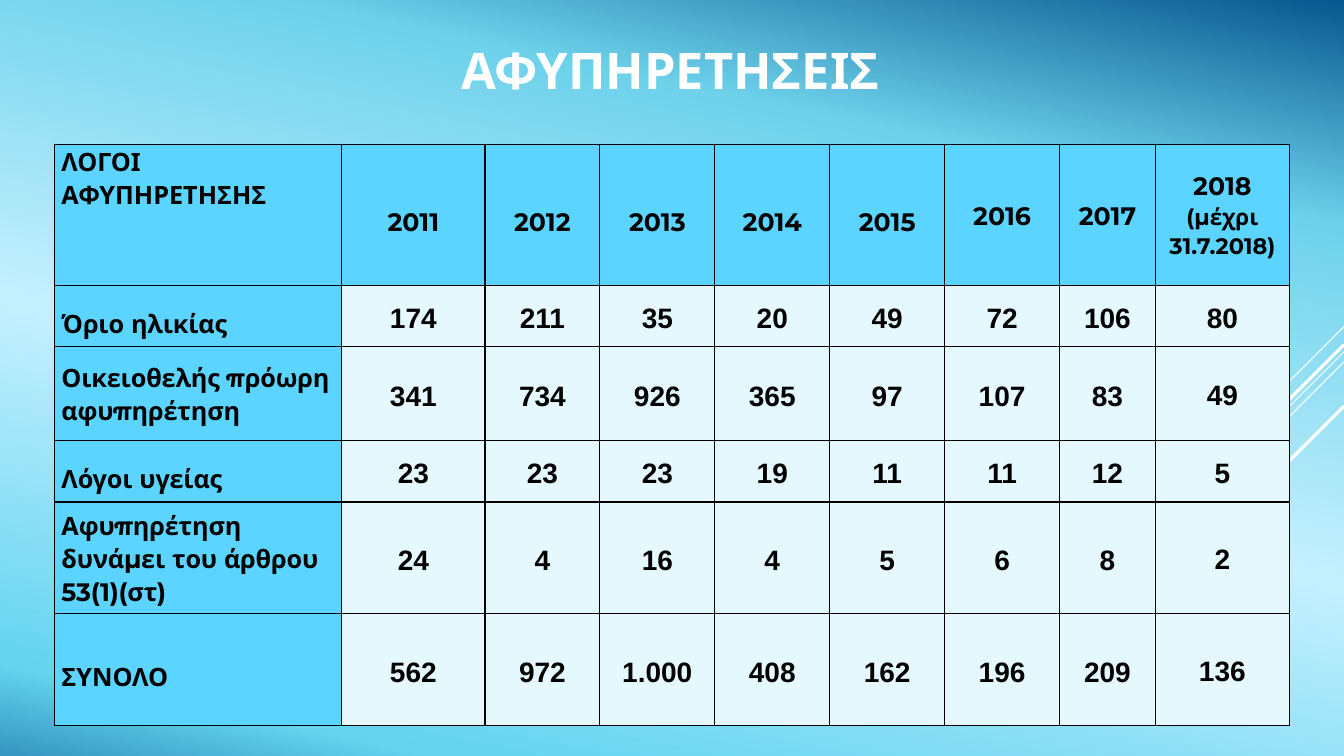
from dataclasses import dataclass

from lxml.etree import SubElement
from pptx import Presentation
from pptx.dml.color import RGBColor
from pptx.enum.shapes import MSO_CONNECTOR
from pptx.enum.text import MSO_ANCHOR, MSO_AUTO_SIZE, PP_ALIGN
from pptx.oxml.ns import qn
from pptx.slide import Slide
from pptx.table import Table, _Cell
from pptx.util import Emu, Pt

EMU_PER_PX = 9144  # 100 px to the inch
SLIDE_WIDTH, SLIDE_HEIGHT = 1333, 750


@dataclass(frozen=True)
class Theme:
    label_font: str = "Montserrat"
    number_font: str = "Arial"
    title_size: int = 36
    label_size: int = 18
    note_size: int = 16
    number_size: int = 20
    white: str = "FFFFFF"
    black: str = "000000"
    label_fill: str = "5BD4FF"
    number_fill: str = "E4F8FD"
    sky: tuple[tuple[int, str], ...] = (
        (0, "06588E"), (22, "6ED2EB"), (56, "C5F0FF"), (91, "64D4EF"), (100, "3596BF"))
    sky_angle: int = 102


@dataclass(frozen=True)
class Streak:
    """A diagonal that runs down and left from the right slide edge."""
    top: int
    reach: int
    weight: float


@dataclass(frozen=True)
class Reason:
    label: str
    height: int
    line_spacing: float
    tracking: int
    counts: tuple[str, ...]


@dataclass(frozen=True)
class CellStyle:
    fill: str
    font: str
    size: int
    line_spacing: float
    align: PP_ALIGN = PP_ALIGN.CENTER
    anchor: MSO_ANCHOR = MSO_ANCHOR.MIDDLE
    space_after: int = 0
    side_margin: int = 7
    top_margin: int = 1


THEME = Theme()
STREAKS = (
    Streak(324, 100, 0.75),
    Streak(349, 326, 0.75),
    Streak(359, 207, 0.75),
    Streak(342, 191, 2.25),
    Streak(403, 139, 2.25),
)
TABLE_LEFT, TABLE_TOP = 54, 143
COLUMN_WIDTHS = (285, 142, 114, 114, 114, 114, 114, 95, 133)
HEADER_HEIGHT = 140
YEARS = ("2011", "2012", "2013", "2014", "2015", "2016", "2017", "2018 ")
LAST_YEAR_NOTE = "(μέχρι 31.7.2018)"
LOOSE_YEARS = YEARS[:5]
REASONS = (
    Reason("Όριο ηλικίας", 61, 1.5, -10,
           ("174", "211", "35", "20", "49", "72", "106", "80")),
    Reason("Οικειοθελής πρόωρη αφυπηρέτηση", 93, 1.07, -10,
           ("341", "734", "926", "365", "97", "107", "83", "49")),
    Reason("Λόγοι υγείας", 61, 1.5, -10,
           ("23", "23", "23", "19", "11", "11", "12", "5")),
    Reason("Αφυπηρέτηση δυνάμει του άρθρου 53(1)(στ)", 111, 1.07, -10,
           ("24", "4", "16", "4", "5", "6", "8", "2")),
    Reason("ΣΥΝΟΛΟ", 111, 1.5, 0,
           ("562", "972", "1.000", "408", "162", "196", "209", "136")),
)


def px(length: int) -> Emu:
    return Emu(length * EMU_PER_PX)


def paint_sky(slide: Slide) -> None:
    fill = slide.background.fill
    fill.gradient()
    fill.gradient_angle = 360 - THEME.sky_angle
    stops = slide.element.find(".//" + qn("a:gsLst"))
    for stop in list(stops):
        stops.remove(stop)
    for percent, color in THEME.sky:
        stop = SubElement(stops, qn("a:gs"), pos=str(percent * 1000))
        SubElement(stop, qn("a:srgbClr"), val=color)


def draw_streak(slide: Slide, streak: Streak) -> None:
    line = slide.shapes.add_connector(
        MSO_CONNECTOR.STRAIGHT, px(SLIDE_WIDTH), px(streak.top),
        px(SLIDE_WIDTH - streak.reach), px(streak.top + streak.reach))
    line.line.color.rgb = RGBColor.from_string(THEME.white)
    line.line.width = Pt(streak.weight)
    SubElement(line.element.spPr, qn("a:effectLst"))


def write_title(slide: Slide, wording: str) -> None:
    title = slide.shapes.title
    title.left, title.top, title.width, title.height = map(px, (215, 33, 900, 71))
    frame = title.text_frame
    frame.text = wording
    frame.auto_size = MSO_AUTO_SIZE.NONE
    frame.vertical_anchor = MSO_ANCHOR.MIDDLE
    heading = frame.paragraphs[0]
    heading.alignment = PP_ALIGN.CENTER
    heading.font.name = THEME.label_font
    heading.font.size = Pt(THEME.title_size)
    heading.font.bold = True
    heading.font.color.rgb = RGBColor.from_string(THEME.white)


def add_borders(cell: _Cell) -> None:
    properties = cell._tc.get_or_add_tcPr()
    for position, side in enumerate(("a:lnL", "a:lnR", "a:lnT", "a:lnB")):
        border = SubElement(properties, qn(side), w=str(Pt(1)))
        fill = SubElement(border, qn("a:solidFill"))
        SubElement(fill, qn("a:srgbClr"), val=THEME.black)
        properties.insert(position, border)


def fill_cell(cell: _Cell, wording: str, style: CellStyle) -> None:
    cell.fill.solid()
    cell.fill.fore_color.rgb = RGBColor.from_string(style.fill)
    add_borders(cell)
    cell.vertical_anchor = style.anchor
    cell.margin_left = cell.margin_right = px(style.side_margin)
    cell.margin_top, cell.margin_bottom = px(style.top_margin), px(0)
    cell.text = wording
    paragraph = cell.text_frame.paragraphs[0]
    paragraph.alignment = style.align
    paragraph.line_spacing = style.line_spacing
    paragraph.space_after = Pt(style.space_after)
    paragraph.font.name = style.font
    paragraph.font.size = Pt(style.size)
    paragraph.font.bold = True
    paragraph.font.color.rgb = RGBColor.from_string(THEME.black)


def label_style(line_spacing: float, **changes) -> CellStyle:
    return CellStyle(THEME.label_fill, THEME.label_font, THEME.label_size,
                     line_spacing, **changes)


def edge_margins(column: int) -> dict[str, int]:
    """The last column has no cell margins."""
    last = column == len(COLUMN_WIDTHS) - 1
    return {"side_margin": 0, "top_margin": 0} if last else {}


def fill_header(table: Table) -> None:
    table.rows[0].height = px(HEADER_HEIGHT)
    fill_cell(table.cell(0, 0), "ΛΟΓΟΙ ΑΦΥΠΗΡΕΤΗΣΗΣ",
              label_style(1.07, align=PP_ALIGN.LEFT, anchor=MSO_ANCHOR.TOP))
    for column, year in enumerate(YEARS, start=1):
        spacing = 1.5 if year in LOOSE_YEARS else 1.07
        fill_cell(table.cell(0, column), year,
                  label_style(spacing, **edge_margins(column)))
    note = table.cell(0, len(YEARS)).text_frame.paragraphs[0].add_run()
    note.text = LAST_YEAR_NOTE
    note.font.size = Pt(THEME.note_size)


def fill_reason(table: Table, row: int, reason: Reason) -> None:
    table.rows[row].height = px(reason.height)
    heading = table.cell(row, 0)
    fill_cell(heading, reason.label,
              label_style(reason.line_spacing, align=PP_ALIGN.LEFT))
    if reason.tracking:
        run = heading.text_frame.paragraphs[0].runs[0]
        run._r.get_or_add_rPr().set("spc", str(reason.tracking))
    for column, count in enumerate(reason.counts, start=1):
        fill_cell(table.cell(row, column), count,
                  CellStyle(THEME.number_fill, THEME.number_font, THEME.number_size,
                            1.15, space_after=10, **edge_margins(column)))


def draw_table(slide: Slide) -> None:
    height = HEADER_HEIGHT + sum(reason.height for reason in REASONS)
    table = slide.shapes.add_table(
        len(REASONS) + 1, len(COLUMN_WIDTHS), px(TABLE_LEFT), px(TABLE_TOP),
        px(sum(COLUMN_WIDTHS)), px(height)).table
    table.horz_banding = False
    for column, width in zip(table.columns, COLUMN_WIDTHS):
        column.width = px(width)
    fill_header(table)
    for row, reason in enumerate(REASONS, start=1):
        fill_reason(table, row, reason)


def main() -> None:
    deck = Presentation()
    deck.slide_width, deck.slide_height = px(SLIDE_WIDTH), px(SLIDE_HEIGHT)
    slide = deck.slides.add_slide(deck.slide_layouts.get_by_name("Title Only"))
    paint_sky(slide)
    for streak in STREAKS:
        draw_streak(slide, streak)
    write_title(slide, "ΑΦΥΠΗΡΕΤΗΣΕΙΣ")
    draw_table(slide)
    deck.save("out.pptx")


if __name__ == "__main__":
    main()
